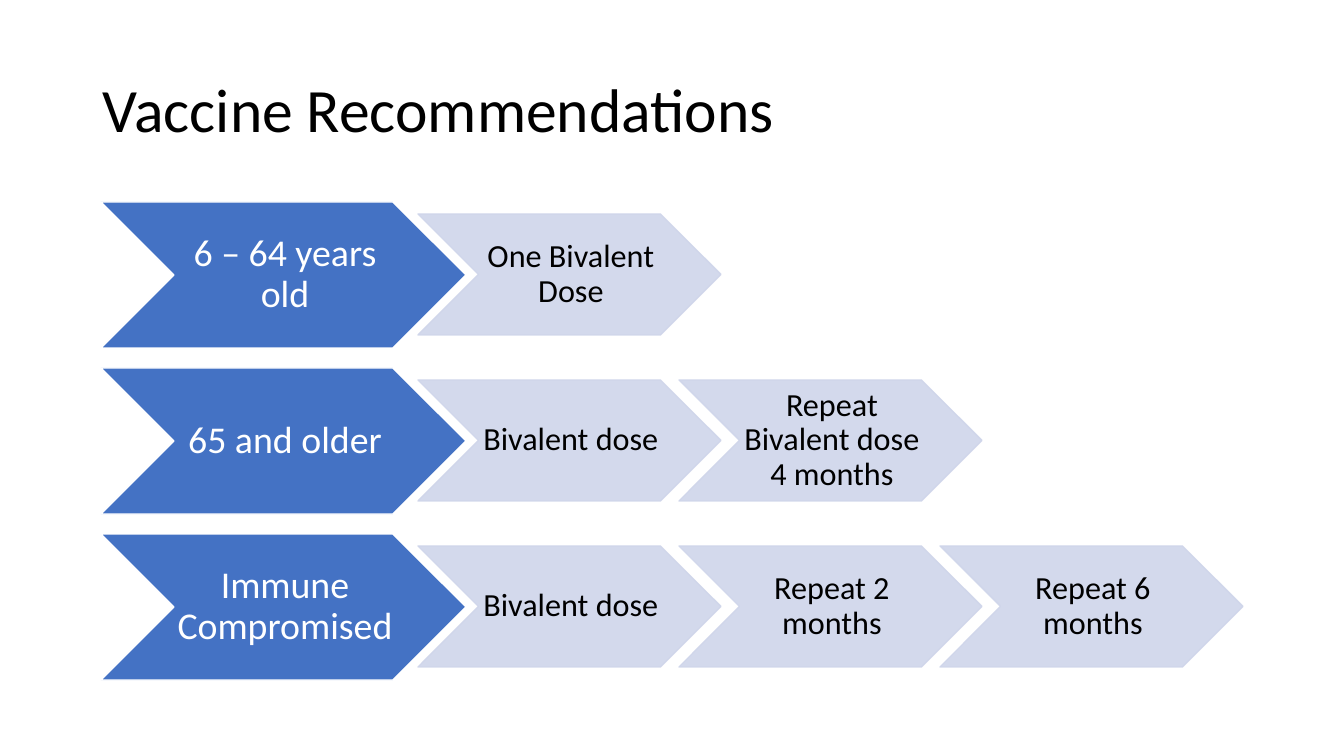
from lxml.etree import SubElement
from pptx import Presentation
from pptx.dml.color import RGBColor
from pptx.enum.shapes import MSO_SHAPE as Shape
from pptx.enum.text import MSO_ANCHOR as Anchor, PP_ALIGN as Align
from pptx.oxml.ns import qn
from pptx.util import Pt

SCALE = 914400 / 100.8
BLUE, PALE, WHITE, BLACK = "4472C4", "CFD5EA", "FFFFFF", "000000"


def px(num):
    return round(num * SCALE)


def tint(fill, color):
    fill.solid()
    fill.fore_color.rgb = RGBColor.from_string(color)


class Deck:
    """Slide style and the slide being drawn."""

    font = "Calibri"

    def __init__(self, wide, high):
        self.show = Presentation()
        self.show.slide_width, self.show.slide_height = px(wide), px(high)
        self.slide = self.show.slides.add_slide(self.show.slide_layouts[6])

    def label(self, frame, text, size, color, align):
        frame.text = text
        frame.word_wrap = True
        frame.vertical_anchor = Anchor.MIDDLE
        para = frame.paragraphs[0]
        para.alignment = align
        para.line_spacing = 0.9
        font = para.runs[0].font
        font.name, font.size = self.font, Pt(size)
        tint(font.fill, color)

    def title(self, box, text):
        frame = self.slide.shapes.add_textbox(*map(px, box)).text_frame
        self.label(frame, text, 44, BLACK, Align.LEFT)

    def arrow(self, box, text, size, color, fill, edge, alpha=100):
        shape = self.slide.shapes.add_shape(Shape.CHEVRON, *map(px, box))
        shape.shadow.inherit = False
        tint(shape.fill, fill)
        tint(shape.line.fill, edge)
        shape.line.width = Pt(1)
        if alpha < 100:
            for node in shape.element.spPr.iter(qn("a:srgbClr")):
                SubElement(node, qn("a:alpha"), val=str(alpha * 1000))
        frame = shape.text_frame
        frame.margin_left, frame.margin_right = px(3), 0
        frame.margin_top = frame.margin_bottom = px(2)
        self.label(frame, text, size, color, Align.CENTER)

    def group(self, x, y, text):
        self.arrow((x, y, 365, 146), text, 27, WHITE, BLUE, WHITE)

    def dose(self, x, y, text):
        self.arrow((x, y, 303, 121), text, 23, BLACK, PALE, PALE, 90)


def main():
    rows = [
        ("6 – 64 years old", ["One Bivalent Dose"]),
        ("65 and older", ["Bivalent dose", "Repeat Bivalent dose 4 months"]),
        ("Immune Compromised",
         ["Bivalent dose", "Repeat 2 months", "Repeat 6 months"]),
    ]
    deck = Deck(1344, 756)
    deck.title((93, 40, 1159, 146), "Vaccine Recommendations")
    for row, (group, doses) in enumerate(rows):
        y = 202 + row * 166
        deck.group(101, y, group)
        for col, dose in enumerate(doses):
            deck.dose(418 + col * 261, y + 12, dose)
    deck.show.save("out.pptx")


if __name__ == "__main__":
    main()
